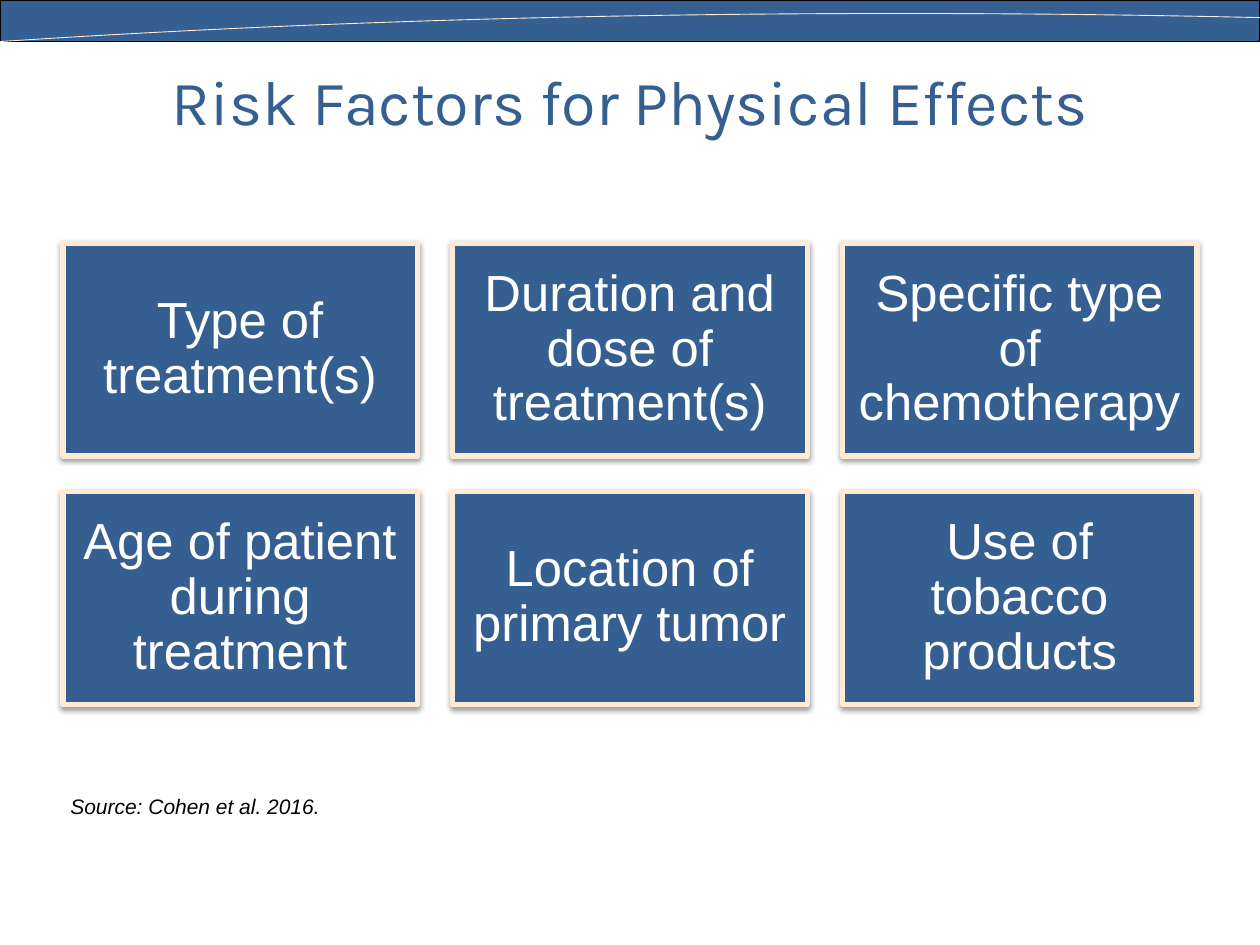
from lxml import etree
from pptx import Presentation
from pptx import util as u
from pptx.dml.color import RGBColor
from pptx.enum import shapes, text
from pptx.oxml import parse_xml
from pptx.oxml.ns import nsdecls, qn

COLORS = {"blue": "365F91", "cream": "FFEAD5", "black": "000000", "white": "FFFFFF"}
FACTORS = [
    "Type of treatment(s)",
    "Duration and dose of treatment(s)",
    "Specific type of chemotherapy",
    "Age of patient during treatment",
    "Location of primary tumor",
    "Use of tobacco products",
]


def color(name):
    return RGBColor.from_string(COLORS[name])


def inches(*lengths):
    return [u.Inches(length) for length in lengths]


def style_text(paragraph, font_name, size, color_name, italic=None):
    for run in paragraph.runs:
        run.font.name = font_name
        run.font.size = u.Pt(size)
        run.font.color.rgb = color(color_name)
        run.font.italic = italic


def add_panel(slide, box, line_color, line_width):
    panel = slide.shapes.add_shape(shapes.MSO_SHAPE.RECTANGLE, *inches(*box))
    panel.shadow.inherit = False
    panel.fill.solid()
    panel.fill.fore_color.rgb = color("blue")
    panel.line.color.rgb = color(line_color)
    panel.line.width = u.Pt(line_width)
    return panel


def add_banner(slide, box):
    left, top, width, height = box
    add_panel(slide, box, "black", 0.75)

    start, *rest = [
        inches(left + x * width, top + y)
        for x, y in [(1, 0.14), (0.74, 0.08), (0.38, 0.08), (0, height)]
    ]
    builder = slide.shapes.build_freeform(*start)
    builder.add_line_segments(rest, close=False)
    swoosh = builder.convert_to_shape()
    swoosh.shadow.inherit = False
    swoosh.fill.background()
    swoosh.line.color.rgb = color("cream")
    swoosh.line.width = u.Pt(0.5)

    outline = next(swoosh._element.iter(qn("a:path")))
    curve = etree.SubElement(outline, qn("a:cubicBezTo"))
    for segment in outline.findall(qn("a:lnTo")):
        curve.append(segment[0])
        outline.remove(segment)


def add_title(slide, box):
    title = slide.shapes.title
    title.left, title.top, title.width, title.height = inches(*box)
    frame = title.text_frame
    frame.text = "Risk Factors for Physical Effects"
    frame.vertical_anchor = text.MSO_ANCHOR.MIDDLE
    frame.paragraphs[0].alignment = text.PP_ALIGN.CENTER
    style_text(frame.paragraphs[0], "Karla", 36, "blue")


def add_drop_shadow(shape):
    effects = shape._element.spPr.find(qn("a:effectLst"))
    effects.append(parse_xml(
        f'<a:outerShdw {nsdecls("a")} blurRad="{u.Pt(3.1)}" dist="{u.Pt(1.6)}" '
        f'dir="5400000" rotWithShape="0"><a:srgbClr val="{COLORS["black"]}">'
        '<a:alpha val="38000"/></a:srgbClr></a:outerShdw>'
    ))


def add_factor_card(slide, box, factor):
    card = add_panel(slide, box, "cream", 3)
    add_drop_shadow(card)
    frame = card.text_frame
    frame.word_wrap = True
    frame.vertical_anchor = text.MSO_ANCHOR.MIDDLE
    frame.margin_left = frame.margin_right = u.Inches(0.12)
    frame.margin_top = frame.margin_bottom = u.Inches(0.12)
    frame.text = factor
    paragraph = frame.paragraphs[0]
    paragraph.alignment = text.PP_ALIGN.CENTER
    paragraph.line_spacing = 0.9
    style_text(paragraph, "Arial", 29, "white")


def add_factor_grid(slide, box, columns=3, gap=0.28):
    left, top, width, height = box
    rows = len(FACTORS) // columns
    card_width = (width - gap * (columns - 1)) / columns
    card_height = (height - gap * (rows - 1)) / rows
    for index, factor in enumerate(FACTORS):
        row, column = divmod(index, columns)
        card_left = left + column * (card_width + gap)
        card_top = top + row * (card_height + gap)
        add_factor_card(slide, (card_left, card_top, card_width, card_height), factor)


def add_source(slide, box):
    frame = slide.shapes.add_textbox(*inches(*box)).text_frame
    frame.word_wrap = True
    frame.auto_size = text.MSO_AUTO_SIZE.SHAPE_TO_FIT_TEXT
    frame.text = "Source: Cohen et al. 2016."
    style_text(frame.paragraphs[0], "Arial", 12, "black", italic=True)


def main():
    deck = Presentation()
    deck.slide_width, deck.slide_height = inches(10, 7.5)
    slide = deck.slides.add_slide(deck.slide_layouts[5])
    add_banner(slide, (0, 0, 10, 0.33))
    add_title(slide, (0.5, 0.17, 9, 1.25))
    add_factor_grid(slide, (0.5, 1.93, 9, 3.66))
    add_source(slide, (0.46, 6.25, 9.08, 0.3))
    deck.save("out.pptx")


if __name__ == "__main__":
    main()
